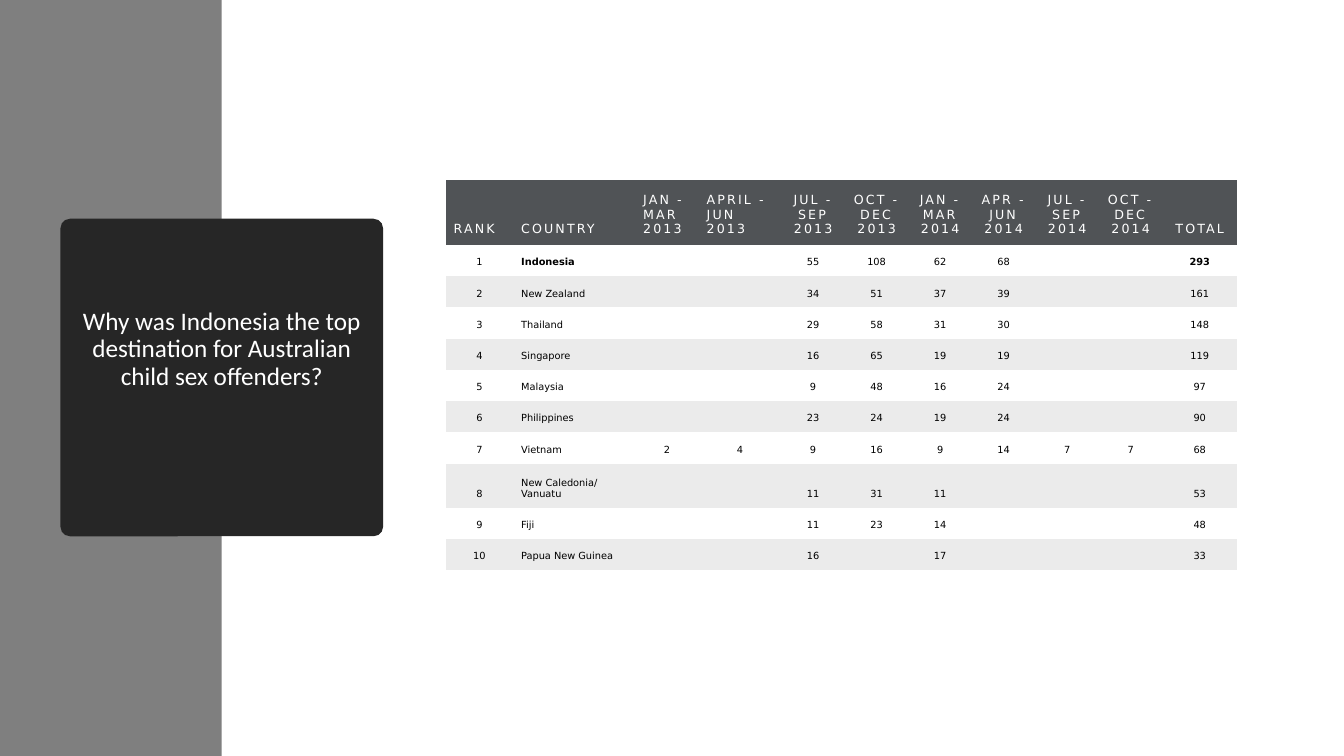
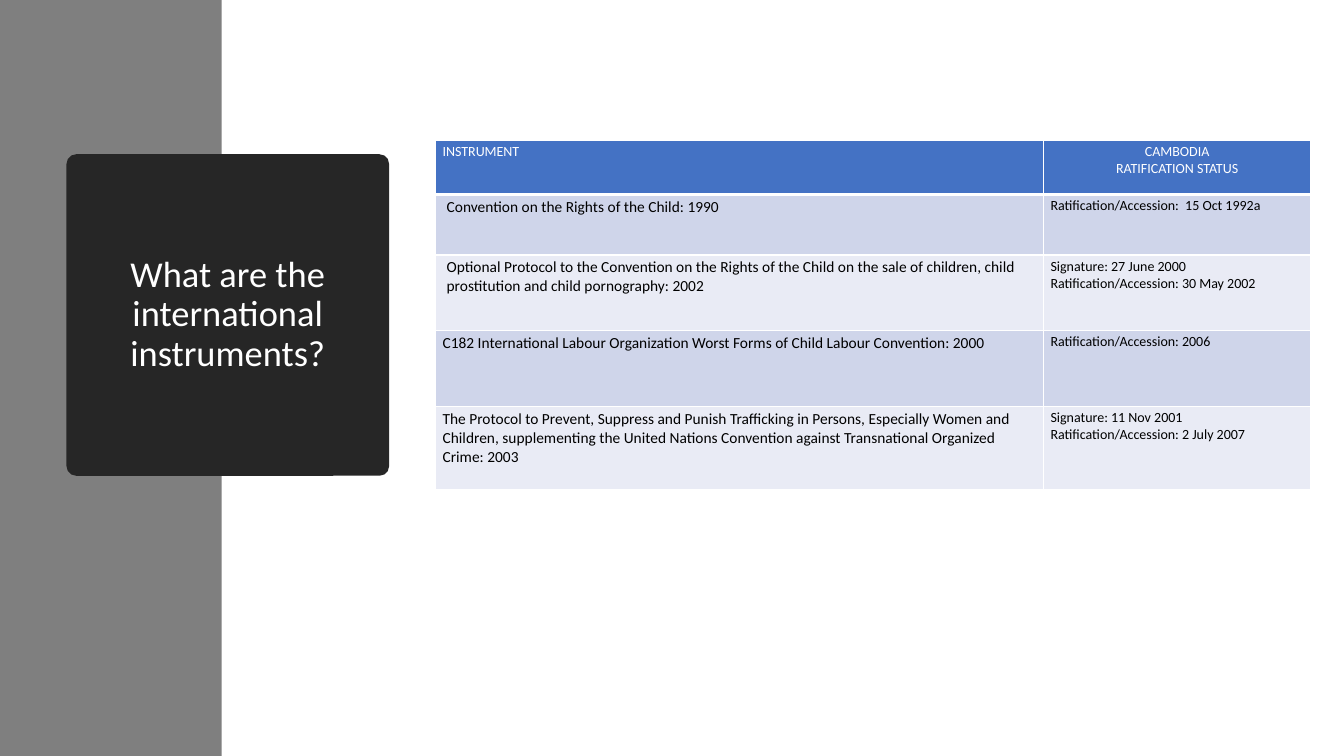
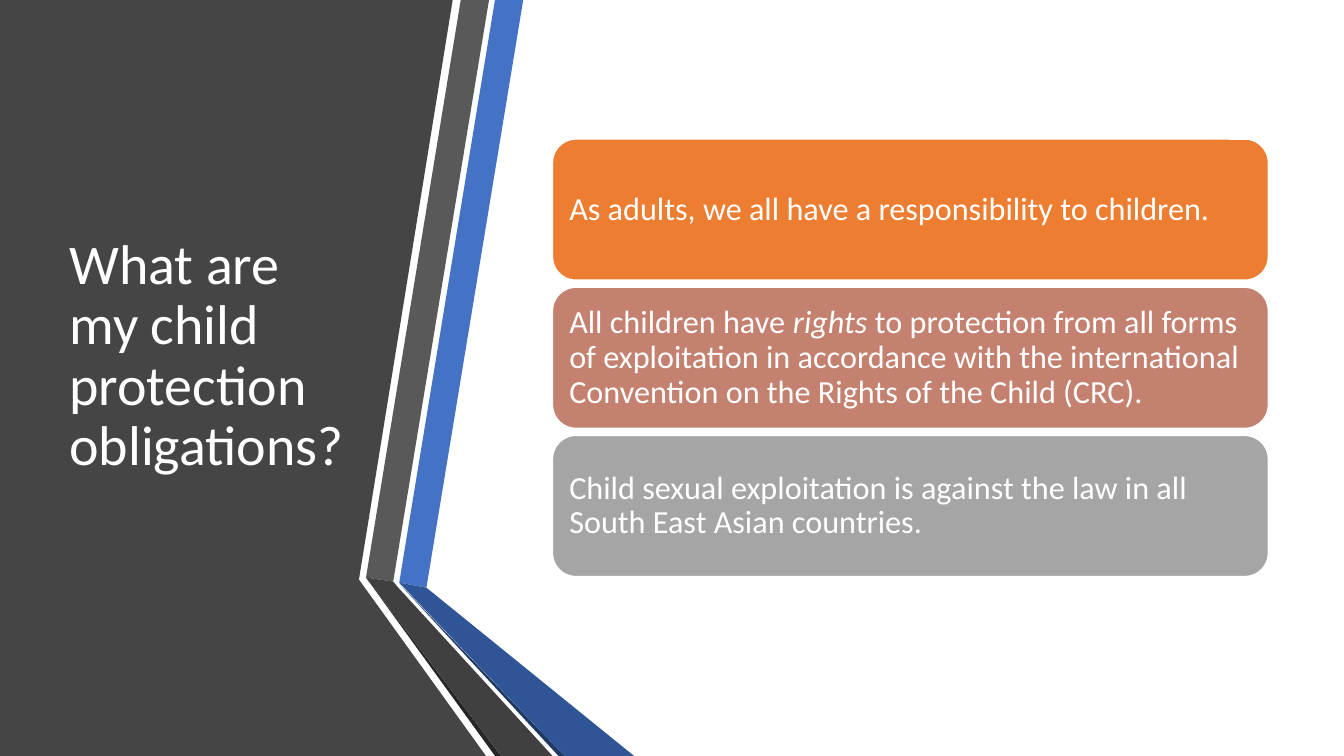
from lxml import etree
from pptx import Presentation
from pptx.dml.color import RGBColor
from pptx.enum import shapes, text
from pptx.oxml.ns import qn
from pptx.util import Inches, Pt

WHITE = RGBColor(0xFF, 0xFF, 0xFF)
BLACK = RGBColor(0x00, 0x00, 0x00)
BAND_GRAY = RGBColor(0x7F, 0x7F, 0x7F)
CARD_DARK = RGBColor(0x26, 0x26, 0x26)
RANK_HEADER = RGBColor(0x50, 0x53, 0x56)
RANK_STRIPE = RGBColor(0xEB, 0xEB, 0xEB)
BLUE = RGBColor(0x44, 0x72, 0xC4)
BLUE_DARK = RGBColor(0x2F, 0x55, 0x97)
BLUE_SHADE = RGBColor(0x20, 0x38, 0x64)
BLUE_PALE = RGBColor(0xCF, 0xD5, 0xEA)
BLUE_FAINT = RGBColor(0xE9, 0xEB, 0xF5)
PANEL_DARK = RGBColor(0x45, 0x45, 0x45)
STRIPE_GRAY = RGBColor(0x59, 0x59, 0x59)
STRIPE_DARK = RGBColor(0x40, 0x40, 0x40)
ORANGE = RGBColor(0xED, 0x7D, 0x31)
ROSE = RGBColor(0xC4, 0x81, 0x70)
SILVER = RGBColor(0xA5, 0xA5, 0xA5)

LEFT, CENTER = text.PP_ALIGN.LEFT, text.PP_ALIGN.CENTER
MIDDLE, TOP, BOTTOM = (text.MSO_ANCHOR.MIDDLE, text.MSO_ANCHOR.TOP,
                       text.MSO_ANCHOR.BOTTOM)
RECT = shapes.MSO_SHAPE.RECTANGLE
ROUNDED = shapes.MSO_SHAPE.ROUNDED_RECTANGLE


class Deck:
    title_font = "Calibri"
    table_font = "DejaVu Sans"

    def __init__(self):
        self.prs = Presentation()
        self.prs.slide_width = Inches(13.33)
        self.prs.slide_height = Inches(7.5)
        self.slide = None

    def new_slide(self):
        self.slide = self.prs.slides.add_slide(self.prs.slide_layouts[6])

    def paint(self, shape, fill, line=None):
        shape.shadow.inherit = False
        shape.fill.solid()
        shape.fill.fore_color.rgb = fill
        if line is None:
            shape.line.fill.background()
        else:
            shape.line.color.rgb = line
            shape.line.width = Pt(1)
        return shape

    def box(self, kind, left, top, width, height, fill, line=None):
        shape = self.slide.shapes.add_shape(
            kind, Inches(left), Inches(top), Inches(width), Inches(height))
        return self.paint(shape, fill, line)

    def outline(self, fill, points):
        corners = [(Inches(x), Inches(y)) for x, y in points]
        builder = self.slide.shapes.build_freeform(*corners[0])
        builder.add_line_segments(corners[1:], close=True)
        self.paint(builder.convert_to_shape(), fill)

    def style(self, paragraph, size, color, font, align, bold=False):
        paragraph.alignment = align
        paragraph.font.size = Pt(size)
        paragraph.font.name = font
        paragraph.font.bold = bold
        paragraph.font.color.rgb = color

    def fill_text(self, frame, runs, size, align):
        frame.word_wrap = True
        frame.vertical_anchor = MIDDLE
        paragraph = frame.paragraphs[0]
        paragraph.line_spacing = 0.9
        self.style(paragraph, size, WHITE, self.title_font, align)
        for words, italic in runs:
            run = paragraph.add_run()
            run.text = words
            if italic:
                run.font.italic = True

    def title_card(self, title, size, left, top, width, height, lift=0):
        self.box(RECT, 0, 0, 2.2, 7.5, BAND_GRAY)
        card = self.box(ROUNDED, left, top, width, height, CARD_DARK)
        card.adjustments[0] = 0.03
        frame = card.text_frame
        frame.margin_left = frame.margin_right = Inches(0.17)
        frame.margin_bottom = Inches(0.05 + lift)
        self.fill_text(frame, [(title, False)], size, CENTER)

    def side_title(self, title):
        title_box = self.slide.shapes.add_textbox(
            Inches(0.59), Inches(0.75), Inches(3.04), Inches(5.58))
        self.fill_text(title_box.text_frame, [(title, False)], 40, LEFT)

    def statement(self, top, fill, runs):
        card = self.box(ROUNDED, 5.48, top, 7.1, 1.4, fill, WHITE)
        frame = card.text_frame
        frame.margin_top = frame.margin_bottom = Inches(0.1)
        self.fill_text(frame, runs, 23, LEFT)

    def table(self, left, top, widths, heights):
        grid = self.slide.shapes.add_table(
            len(heights), len(widths), Inches(left), Inches(top),
            Inches(sum(widths)), Inches(sum(heights))).table
        grid.first_row = grid.horz_banding = False
        for column, width in zip(grid.columns, widths):
            column.width = Inches(width)
        for row, height in zip(grid.rows, heights):
            row.height = Inches(height)
        return grid

    def cell(self, cell, words, size, color, font, align, anchor, margins,
             fill=None, bold=False, spacing=None):
        side, edge = margins
        cell.margin_left = cell.margin_right = Inches(side)
        cell.margin_top = cell.margin_bottom = Inches(edge)
        cell.vertical_anchor = anchor
        cell.text = words
        for paragraph in cell.text_frame.paragraphs:
            self.style(paragraph, size, color, font, align, bold)
            for run in paragraph.runs:
                if spacing:
                    run._r.get_or_add_rPr().set("spc", str(spacing))
            if not words:
                etree.SubElement(paragraph._p, qn("a:endParaRPr"),
                                 sz=str(size * 100))
        if fill is None:
            cell.fill.background()
        else:
            cell.fill.solid()
            cell.fill.fore_color.rgb = fill

    def borders(self, cell, color=None, width=1, bottom=1):
        props = cell._tc.get_or_add_tcPr()
        for index, side in enumerate(("lnL", "lnR", "lnT", "lnB")):
            points = bottom if side == "lnB" else width
            line = etree.Element(qn("a:" + side), w=str(Pt(points)))
            if color is None:
                etree.SubElement(line, qn("a:noFill"))
            else:
                solid = etree.SubElement(line, qn("a:solidFill"))
                etree.SubElement(solid, qn("a:srgbClr"), val=str(color))
            props.insert(index, line)


RANKING = [
    ["RANK", "COUNTRY", "JAN - MAR 2013", "APRIL - JUN 2013",
     "JUL - SEP 2013", "OCT - DEC 2013", "JAN - MAR 2014",
     "APR - JUN 2014", "JUL - SEP 2014", "OCT - DEC 2014", "TOTAL"],
    ["1", "Indonesia", "", "", "55", "108", "62", "68", "", "", "293"],
    ["2", "New Zealand", "", "", "34", "51", "37", "39", "", "", "161"],
    ["3", "Thailand", "", "", "29", "58", "31", "30", "", "", "148"],
    ["4", "Singapore", "", "", "16", "65", "19", "19", "", "", "119"],
    ["5", "Malaysia", "", "", "9", "48", "16", "24", "", "", "97"],
    ["6", "Philippines", "", "", "23", "24", "19", "24", "", "", "90"],
    ["7", "Vietnam", "2", "4", "9", "16", "9", "14", "7", "7", "68"],
    ["8", "New Caledonia/ Vanuatu", "", "", "11", "31", "11", "", "", "",
     "53"],
    ["9", "Fiji", "", "", "11", "23", "14", "", "", "", "48"],
    ["10", "Papua New Guinea", "", "", "16", "", "17", "", "", "", "33"],
]

INSTRUMENTS = [
    ("INSTRUMENT", "CAMBODIA\nRATIFICATION STATUS"),
    ("Convention on the Rights of the Child: 1990",
     "Ratification/Accession:  15 Oct 1992a"),
    ("Optional Protocol to the Convention on the Rights of the Child on the "
     "sale of children, child prostitution and child pornography: 2002",
     "Signature: 27 June 2000\nRatification/Accession: 30 May 2002"),
    ("C182 International Labour Organization Worst Forms of Child Labour "
     "Convention: 2000", "Ratification/Accession: 2006"),
    ("The Protocol to Prevent, Suppress and Punish Trafficking in Persons, "
     "Especially Women and Children, supplementing the United Nations "
     "Convention against Transnational Organized Crime: 2003",
     "Signature: 11 Nov 2001\nRatification/Accession: 2 July 2007"),
]

RIBBONS = [
    (PANEL_DARK, [(0, 0), (4.49, 0), (3.56, 5.75), (4.82, 7.5), (0, 7.5)]),
    (BLUE, [(3.96, 5.78), (4.23, 5.83), (5.19, 0), (4.91, 0)]),
    (STRIPE_GRAY, [(4.85, 0), (4.57, 0), (3.63, 5.73), (3.9, 5.77)]),
    (CARD_DARK, [(3.63, 5.73), (4.91, 7.5), (4.97, 7.5)]),
    (BLUE_SHADE, [(3.96, 5.79), (5.54, 7.5), (5.6, 7.5)]),
    (BLUE_DARK, [(3.96, 5.78), (5.6, 7.5), (6.29, 7.5), (4.23, 5.83)]),
    (STRIPE_DARK, [(5.48, 7.5), (3.95, 5.83), (3.9, 5.77), (3.63, 5.73),
                   (4.97, 7.5)]),
]

STATEMENTS = [
    (ORANGE, [("As adults, we all have a responsibility to children.",
               False)]),
    (ROSE, [("All children have ", False), ("rights", True),
            (" to protection from all forms of exploitation in accordance "
             "with the international Convention on the Rights of the Child "
             "(CRC).", False)]),
    (SILVER, [("Child sexual exploitation is against the law in all South "
               "East Asian countries.", False)]),
]


def destinations(deck):
    deck.new_slide()
    deck.title_card("Why was Indonesia the top destination for Australian "
                    "child sex offenders?", 18, 0.6, 2.17, 3.2, 3.15,
                    lift=0.55)
    widths = [0.67, 1.21, 0.63, 0.82] + [0.63] * 6 + [0.74]
    heights = [0.64] + [0.31] * 7 + [0.44] + [0.31] * 2
    ranking = deck.table(4.42, 1.79, widths, heights)
    for r, row in enumerate(RANKING):
        header = r == 0
        stripe = RANK_STRIPE if r % 2 == 0 else None
        for c, words in enumerate(row):
            cell = ranking.cell(r, c)
            left = c == 1 or (header and c < 4)
            deck.cell(cell, words, 9 if header else 7,
                      WHITE if header else BLACK, deck.table_font,
                      LEFT if left else CENTER, BOTTOM, (0.08, 0.08),
                      RANK_HEADER if header else stripe,
                      bold=r == 1 and c in (1, 10),
                      spacing=150 if header else None)
            deck.borders(cell)


def instruments(deck):
    deck.new_slide()
    deck.title_card("What are the international instruments?", 26,
                    0.66, 1.53, 3.2, 3.19)
    treaties = deck.table(4.32, 1.39, [6.03, 2.65],
                          [0.54, 0.6, 0.75, 0.75, 0.83])
    for r, row in enumerate(INSTRUMENTS):
        header = r == 0
        fill = BLUE if header else BLUE_PALE if r % 2 else BLUE_FAINT
        for c, words in enumerate(row):
            cell = treaties.cell(r, c)
            deck.cell(cell, words, 10 if header or c else 11,
                      WHITE if header else BLACK, deck.title_font,
                      CENTER if header and c else LEFT, TOP, (0.07, 0.03),
                      fill)
            if c == 0 and r in (1, 2):
                cell.margin_left = Inches(0.11)
            deck.borders(cell, WHITE, bottom=3 if header else 1)


def obligations(deck):
    deck.new_slide()
    for fill, points in RIBBONS:
        deck.outline(fill, points)
    deck.side_title("What are my child protection obligations?")
    for i, (fill, runs) in enumerate(STATEMENTS):
        deck.statement(1.38 + i * 1.47, fill, runs)


def main():
    deck = Deck()
    destinations(deck)
    instruments(deck)
    obligations(deck)
    deck.prs.save("out.pptx")


if __name__ == "__main__":
    main()
